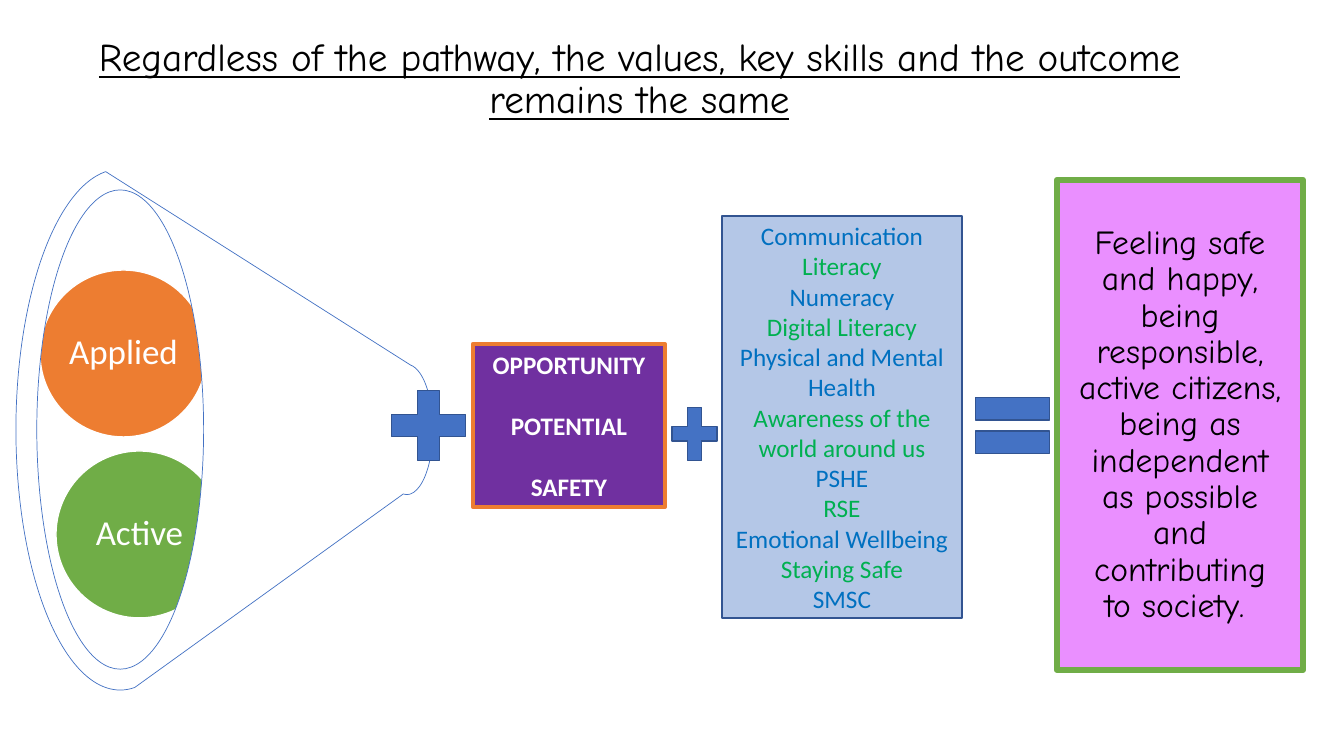
import pptx
import pptx.util
import pptx.dml.color
import pptx.enum.shapes
import pptx.enum.text

PIXEL = 914400 / 100.8
SHAPES = pptx.enum.shapes.MSO_SHAPE
BLUE, NAVY, ORANGE, GREEN, WHITE = "4472C4", "325491", "ED7D31", "70AD47", "FFFFFF"

deck = pptx.Presentation()
deck.slide_width = round(1344 * PIXEL)
deck.slide_height = round(756 * PIXEL)
page = deck.slides.add_slide(deck.slide_layouts[5])


def add_box(kind, place, fill, line, weight):
    box = page.shapes.add_shape(kind, *[round(length * PIXEL) for length in place])
    box.shadow.inherit = False
    box.fill.solid()
    box.fill.fore_color.rgb = pptx.dml.color.RGBColor.from_string(fill)
    box.line.color.rgb = pptx.dml.color.RGBColor.from_string(line)
    box.line.width = pptx.util.Pt(weight)
    return box


def write_text(box, lines, size, colours, font="Calibri", bold=False, underline=False,
               spacing=1.0, gap=0, inset=None):
    frame = box.text_frame
    frame.word_wrap = True
    frame.auto_size = pptx.enum.text.MSO_AUTO_SIZE.NONE
    frame.vertical_anchor = pptx.enum.text.MSO_ANCHOR.MIDDLE
    if inset is not None:
        frame.margin_left = frame.margin_right = round(inset * PIXEL)
        frame.margin_top = frame.margin_bottom = round(inset * PIXEL)
    for index, line in enumerate(lines):
        para = frame.add_paragraph() if index else frame.paragraphs[0]
        para.alignment = pptx.enum.text.PP_ALIGN.CENTER
        para.line_spacing = spacing
        para.space_before = pptx.util.Pt(gap if index else 0)
        span = para.add_run()
        span.text = line
        span.font.name = font
        span.font.size = pptx.util.Pt(size)
        span.font.bold = bold
        span.font.underline = underline
        colour = colours[index % len(colours)]
        span.font.color.rgb = pptx.dml.color.RGBColor.from_string(colour)


outcome = add_box(SHAPES.RECTANGLE, (1057, 180, 246, 490), "EA8FFF", GREEN, 4.5)
write_text(outcome, ["Feeling safe and happy, being responsible, active citizens, being as "
                     "independent as possible and contributing to society. "],
           24, ["000000"], font="Comic Neue", spacing=0.9, inset=19)

for pathway, left, top, fill in (("Active", 56, 451, GREEN), ("Applied", 40, 270, ORANGE)):
    circle = add_box(SHAPES.OVAL, (left, top, 167, 167), fill, WHITE, 1)
    write_text(circle, [pathway], 25, [WHITE], spacing=0.9, inset=3)

funnel = add_box(SHAPES.FUNNEL, (-36, 221, 521, 417), WHITE, BLUE, 0.5)
funnel.rotation = 270

title = page.shapes.title
title.left, title.top, title.width, title.height = [
    round(length * PIXEL) for length in (60, 7, 1159, 146)]
write_text(title, ["Regardless of the pathway, the values, key skills and the outcome "
                   "remains the same"],
           28, ["000000"], font="Comic Neue", underline=True, spacing=0.9)

skills = add_box(SHAPES.RECTANGLE, (722, 216, 240, 402), "B4C7E7", NAVY, 1)
write_text(skills, ["Communication", "Literacy", "Numeracy", "Digital Literacy",
                    "Physical and Mental Health", "Awareness of the world around us",
                    "PSHE", "RSE", "Emotional Wellbeing", "Staying Safe", "SMSC"],
           18, ["0070C0", "00B050"])

values = add_box(SHAPES.RECTANGLE, (473, 344, 192, 163), "7030A0", ORANGE, 3)
write_text(values, ["OPPORTUNITY", "POTENTIAL", "SAFETY"], 18, [WHITE], bold=True, gap=22)

for sign, place in ((SHAPES.MATH_PLUS, (378, 378, 101, 95)),
                    (SHAPES.MATH_PLUS, (664, 398, 61, 72)),
                    (SHAPES.MATH_EQUAL, (962, 378, 101, 95))):
    add_box(sign, place, BLUE, NAVY, 1)

deck.save("out.pptx")
